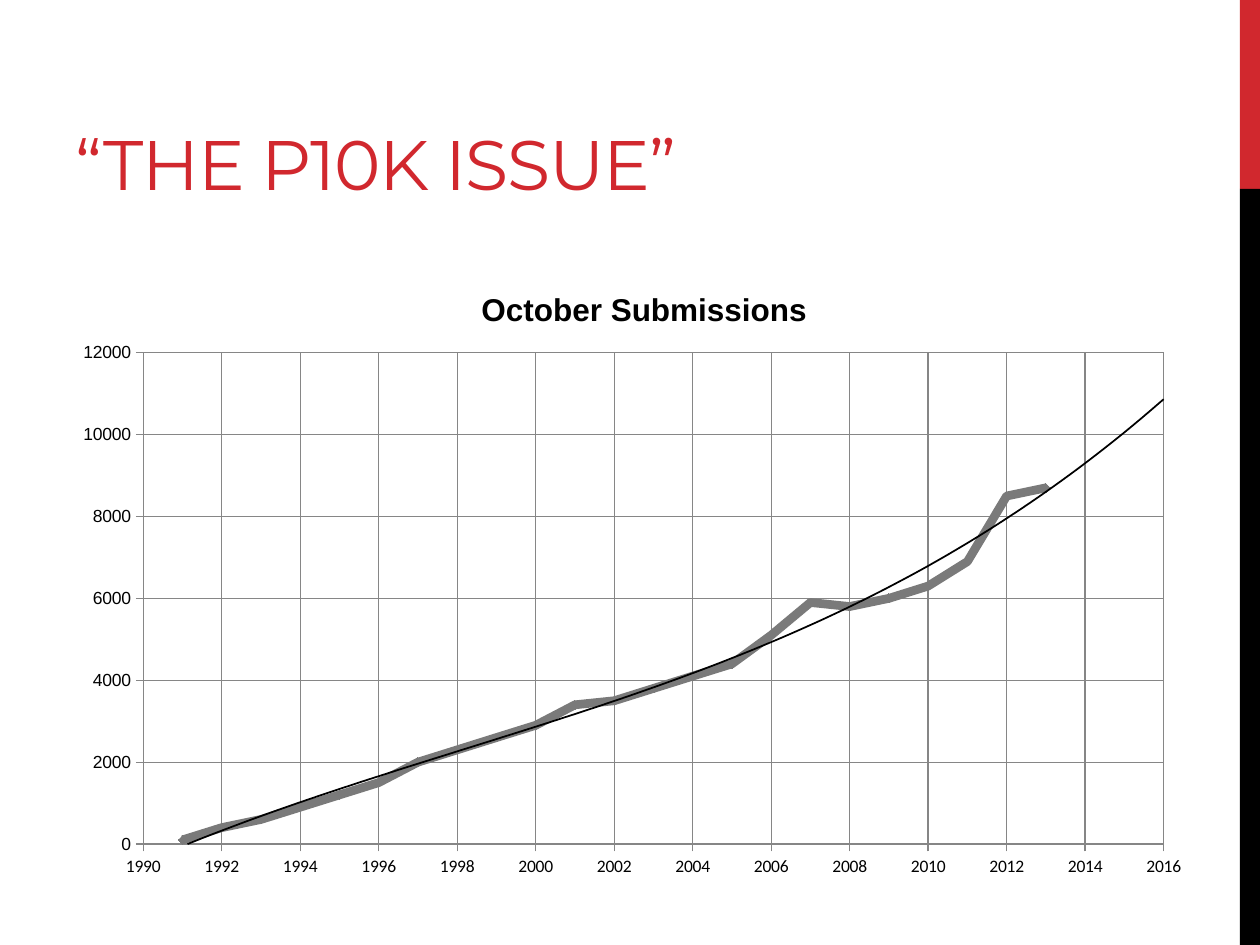
from dataclasses import dataclass

from pptx import Presentation, util as u
from pptx.chart.data import XyChartData
from pptx.dml.color import RGBColor
from pptx.enum import chart as ch, shapes, text
from pptx.oxml import parse_xml
from pptx.oxml.ns import nsdecls, qn

RED, BLACK, GRAY, GRID = "D1282E", "000000", "7A7A7A", "868686"
TITLE = "October Submissions"
START = 1991
COUNTS = [100, 400, 600, 900, 1200, 1500, 2000, 2300, 2600, 2900, 3400, 3500,
          3800, 4100, 4400, 5100, 5900, 5800, 6000, 6300, 6900, 8500, 8700]


@dataclass
class Band:
    top: float
    height: float
    color: str


@dataclass
class Scale:
    low: int
    high: int
    step: int
    font: str


def rgb(code: str) -> RGBColor:
    return RGBColor.from_string(code)


def style(font, name: str, size: float, color: str, bold: bool = False) -> None:
    font.name, font.size, font.bold = name, u.Pt(size), bold
    font.color.rgb = rgb(color)


def draw_band(slide, band: Band) -> None:
    shape = slide.shapes.add_shape(
        shapes.MSO_SHAPE.RECTANGLE, u.Inches(9.84), u.Inches(band.top),
        u.Inches(0.16), u.Inches(band.height))
    shape.shadow.inherit = False
    shape.fill.solid()
    shape.fill.fore_color.rgb = rgb(band.color)
    shape.line.fill.background()


def set_scale(axis, scale: Scale) -> None:
    axis.minimum_scale, axis.maximum_scale = scale.low, scale.high
    axis.major_unit = scale.step
    axis.has_title = False
    axis.has_major_gridlines = True
    axis.major_tick_mark = ch.XL_TICK_MARK.OUTSIDE
    axis.minor_tick_mark = ch.XL_TICK_MARK.NONE
    axis.tick_labels.number_format = "General"
    axis.tick_labels.number_format_is_linked = False
    style(axis.tick_labels.font, scale.font, 10, BLACK)
    for line in (axis.format.line, axis.major_gridlines.format.line):
        line.color.rgb = rgb(GRID)
        line.width = u.Pt(0.75)


def place(parent, index: int, inner: bool = False, **spots: float) -> None:
    """Give a chart part a manual layout, as fractions of the chart."""
    for old in parent.findall(qn("c:layout")):
        parent.remove(old)
    target = '<c:layoutTarget val="inner"/>' if inner else ""
    modes = "".join(f'<c:{k}Mode val="edge"/>' for k in "xy")
    sizes = "".join(f'<c:{k} val="{v}"/>' for k, v in spots.items())
    parent.insert(index, parse_xml(
        f'<c:layout {nsdecls("c")}><c:manualLayout>{target}{modes}{sizes}'
        '</c:manualLayout></c:layout>'))


def add_trend(chart, order: int, ahead: int) -> None:
    trend = parse_xml(
        f'<c:trendline {nsdecls("c", "a")}><c:spPr><a:ln w="{u.Pt(1)}"><a:solidFill>'
        f'<a:srgbClr val="{BLACK}"/></a:solidFill></a:ln></c:spPr>'
        f'<c:trendlineType val="poly"/><c:order val="{order}"/>'
        f'<c:forward val="{ahead}"/><c:dispRSqr val="0"/><c:dispEq val="0"/>'
        '</c:trendline>')
    chart.element.xpath(".//c:ser/c:xVal")[0].addprevious(trend)


def draw_chart(slide) -> None:
    data = XyChartData()
    points = data.add_series(TITLE)
    for year, count in enumerate(COUNTS, START):
        points.add_data_point(year, count)
    chart = slide.shapes.add_chart(
        ch.XL_CHART_TYPE.XY_SCATTER_SMOOTH, u.Inches(0.5), u.Inches(2.05),
        u.Inches(9.1), u.Inches(5), data).chart
    style(chart.font, "Arial", 10, BLACK)
    chart.has_legend = False
    chart.plots[0].vary_by_categories = False

    # Chart title
    chart.has_title = True
    frame = chart.chart_title.text_frame
    frame.text = TITLE
    style(frame.paragraphs[0].font, "Arial", 18, BLACK, bold=True)

    # Axes
    set_scale(chart.category_axis, Scale(1990, 2016, 2, "Calibri"))
    set_scale(chart.value_axis, Scale(0, 12000, 2000, "Arial"))

    # Series and its trend
    series = chart.plots[0].series[0]
    series.smooth = True
    series.format.line.color.rgb = rgb(GRAY)
    series.format.line.width = u.Pt(5)
    mark = series.marker
    mark.style, mark.size = ch.XL_MARKER_STYLE.DIAMOND, 5
    mark.format.fill.solid()
    mark.format.fill.fore_color.rgb = rgb(GRAY)
    mark.format.line.color.rgb = rgb(GRAY)
    add_trend(chart, order=3, ahead=3)

    # Layout
    place(chart.element.xpath("./c:chart/c:title")[0], 1, x=0.36, y=0.04)
    place(chart.element.xpath(".//c:plotArea")[0], 0, inner=True,
          x=0.07, y=0.15, w=0.89, h=0.78)


def draw_title(slide) -> None:
    title = slide.shapes.title
    title.left, title.top = u.Inches(0.5), u.Inches(0.17)
    title.width, title.height = u.Inches(6.33), u.Inches(1.5)
    frame = title.text_frame
    frame.text = "“THE P10K ISSUE”"
    frame.word_wrap = True
    frame.vertical_anchor = text.MSO_ANCHOR.BOTTOM
    para = frame.paragraphs[0]
    para.alignment = text.PP_ALIGN.LEFT
    style(para.font, "Montserrat", 40, RED)
    para.runs[0].font.element.set("spc", "-60") if hasattr(
        para.runs[0].font, "element") else para.runs[0]._r.get_or_add_rPr().set("spc", "-60")


def main() -> None:
    deck = Presentation()
    deck.slide_width, deck.slide_height = u.Inches(10), u.Inches(7.5)
    slide = deck.slides.add_slide(deck.slide_layouts[5])
    for band in (Band(0, 1.5, RED), Band(1.5, 6, BLACK)):
        draw_band(slide, band)
    draw_title(slide)
    draw_chart(slide)
    deck.save("out.pptx")


if __name__ == "__main__":
    main()
